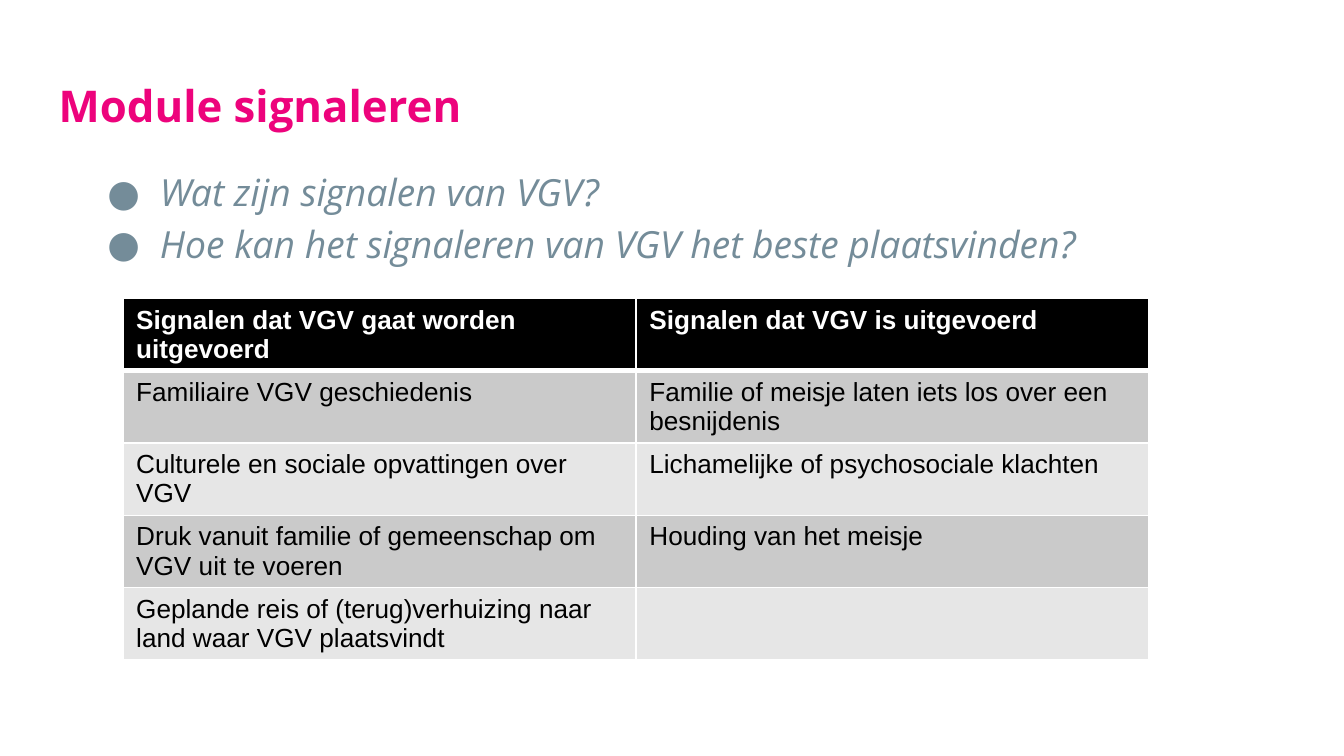
from dataclasses import dataclass

from lxml.etree import SubElement
from pptx import Presentation
from pptx.dml.color import RGBColor
from pptx.enum.text import MSO_ANCHOR, PP_ALIGN
from pptx.oxml.ns import qn
from pptx.util import Cm, Pt


@dataclass(frozen=True)
class Theme:
    pink: str = "ED037C"
    slate: str = "748C99"
    white: str = "FFFFFF"
    black: str = "000000"
    dark_band: str = "CACACA"
    light_band: str = "E6E6E6"
    text_font: str = "Open Sans"
    table_font: str = "Arial"
    title_size: float = 23.4
    list_size: float = 20
    table_size: float = 14


THEME = Theme()

QUESTIONS = [
    "Wat zijn signalen van VGV?",
    "Hoe kan het signaleren van VGV het beste plaatsvinden?",
]
SIGNALS = [
    ("Signalen dat VGV gaat worden uitgevoerd", "Signalen dat VGV is uitgevoerd"),
    ("Familiaire VGV geschiedenis", "Familie of meisje laten iets los over een besnijdenis"),
    ("Culturele en sociale opvattingen over VGV", "Lichamelijke of psychosociale klachten"),
    ("Druk vanuit familie of gemeenschap om VGV uit te voeren", "Houding van het meisje"),
    ("Geplande reis of (terug)verhuizing naar land waar VGV plaatsvindt", ""),
]


def style_font(paragraph, name, size, color, bold=False, italic=False):
    font = paragraph.font
    font.name, font.size, font.bold, font.italic = name, Pt(size), bold, italic
    font.color.rgb = RGBColor.from_string(color)


def place(shape, left, top, width, height):
    """Position a placeholder and give its text frame even margins."""
    shape.left, shape.top, shape.width, shape.height = map(Cm, (left, top, width, height))
    frame = shape.text_frame
    frame.word_wrap = True
    frame.vertical_anchor = MSO_ANCHOR.TOP
    frame.margin_left = frame.margin_right = Cm(0.25)
    frame.margin_top = frame.margin_bottom = Cm(0.25)
    return frame


def add_color(parent, color):
    SubElement(parent, qn("a:srgbClr"), val=color)


def add_bullet(paragraph):
    properties = paragraph._p.get_or_add_pPr()
    properties.set("marL", str(Cm(1.27)))
    properties.set("indent", str(Cm(-0.99)))
    add_color(SubElement(properties, qn("a:buClr")), THEME.slate)
    SubElement(properties, qn("a:buFont"), typeface=THEME.text_font)
    SubElement(properties, qn("a:buChar"), char="●")


def fill_title(shape):
    frame = place(shape, 0.86, 1.24, 23.67, 1.6)
    frame.text = "Module signaleren"
    paragraph = frame.paragraphs[0]
    paragraph.alignment = PP_ALIGN.LEFT
    paragraph.line_spacing = 1.0
    style_font(paragraph, THEME.text_font, THEME.title_size, THEME.pink, bold=True)


def fill_list(shape):
    frame = place(shape, 1.5, 2.82, 22.4, 7.82)
    frame.text = "\n".join(QUESTIONS)
    for paragraph in frame.paragraphs:
        paragraph.line_spacing = 1.15
        paragraph.space_before = Pt(0)
        add_bullet(paragraph)
        style_font(paragraph, THEME.text_font, THEME.list_size, THEME.slate, italic=True)


def set_borders(cell, widths):
    """Draw white borders; widths maps a side (L, R, T, B) to points."""
    properties = cell._tc.get_or_add_tcPr()
    for position, (side, width) in enumerate(widths.items()):
        line = properties.makeelement(qn(f"a:ln{side}"), {"w": str(Pt(width))})
        add_color(SubElement(line, qn("a:solidFill")), THEME.white)
        properties.insert(position, line)


def fill_cell(cell, text, row_index):
    is_header = row_index == 0
    band = THEME.dark_band if row_index % 2 else THEME.light_band
    cell.fill.solid()
    cell.fill.fore_color.rgb = RGBColor.from_string(THEME.black if is_header else band)
    cell.text = text
    style_font(cell.text_frame.paragraphs[0], THEME.table_font, THEME.table_size,
               THEME.white if is_header else THEME.black, bold=is_header)
    set_borders(cell, {"L": 1, "R": 1, "T": 3 if row_index == 1 else 1,
                       "B": 3 if is_header else 1})


def add_signal_table(slide):
    row_height, column_width = Cm(1.36), Cm(9.7)
    table = slide.shapes.add_table(
        len(SIGNALS), 2, Cm(2.32), Cm(5.64), 2 * column_width, len(SIGNALS) * row_height
    ).table
    for row_index, texts in enumerate(SIGNALS):
        for column_index, text in enumerate(texts):
            fill_cell(table.cell(row_index, column_index), text, row_index)


def main():
    presentation = Presentation()
    presentation.slide_width, presentation.slide_height = Cm(25.4), Cm(14.28)
    slide = presentation.slides.add_slide(presentation.slide_layouts[1])

    # Heading and questions
    fill_title(slide.shapes.title)
    fill_list(slide.placeholders[1])

    # Signals before and after
    add_signal_table(slide)

    presentation.save("out.pptx")


if __name__ == "__main__":
    main()
